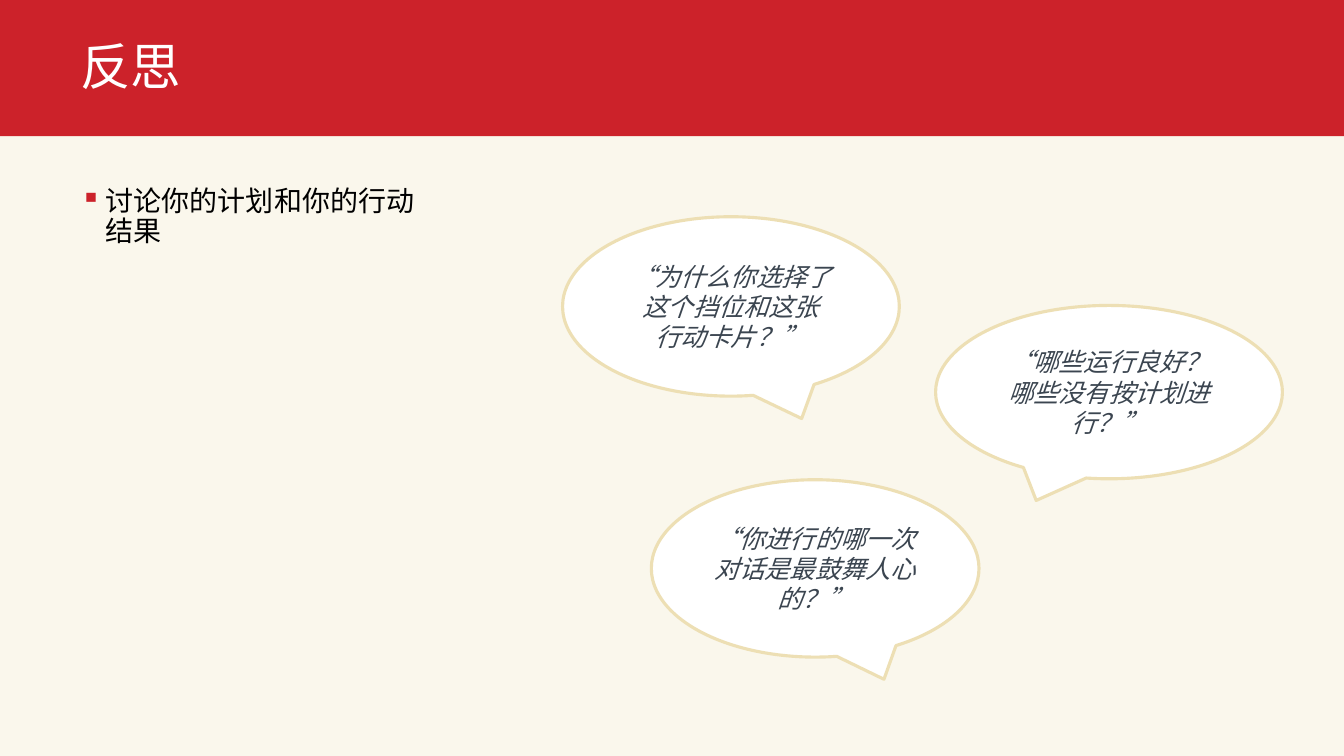
from lxml import etree
from pptx import Presentation
from pptx.dml.color import RGBColor
from pptx.enum.shapes import MSO_SHAPE
from pptx.enum.text import MSO_ANCHOR, PP_ALIGN
from pptx.oxml.ns import qn
from pptx.util import Inches, Pt

RECTANGLE = MSO_SHAPE.RECTANGLE
CALLOUT = MSO_SHAPE.OVAL_CALLOUT
TOP, MIDDLE = MSO_ANCHOR.TOP, MSO_ANCHOR.MIDDLE
LEFT, CENTER = PP_ALIGN.LEFT, PP_ALIGN.CENTER

WIDTH, HEIGHT = 13.33, 7.5
BANNER_HEIGHT = 0.18 * HEIGHT
MARGIN = 0.7
FONT = "Noto Sans CJK SC"
RED, CREAM, SAND = "CC222A", "FAF7EC", "EDDFB4"
WHITE, BLACK, SLATE = "FFFFFF", "000000", "3B4550"

TAIL_OFFSET = 0.21
QUESTIONS = [
    ((5.58, 2.15, 3.34, 1.78), TAIL_OFFSET, "“为什么你选择了这个挡位和这张\n行动卡片？”"),
    ((9.28, 3.03, 3.44, 1.72), -TAIL_OFFSET, "“哪些运行良好？哪些没有按计划进行？”"),
    ((6.46, 4.76, 3.25, 1.76), TAIL_OFFSET, "“你进行的哪一次对话是最鼓舞人心的？”"),
]


def color(value):
    return RGBColor.from_string(value)


def add_filled_shape(slide, kind, box, fill):
    shape = slide.shapes.add_shape(kind, *map(Inches, box))
    shape.shadow.inherit = False
    shape.fill.solid()
    shape.fill.fore_color.rgb = color(fill)
    shape.line.fill.background()
    return shape


def write_text(shape, text, size, text_color, anchor, align, italic=None, spacing=None):
    frame = shape.text_frame
    frame.word_wrap = True
    frame.vertical_anchor = anchor
    frame.text = text
    for paragraph in frame.paragraphs:
        paragraph.alignment = align
        paragraph.line_spacing = spacing
        for run in paragraph.runs:
            run.font.size = Pt(size)
            run.font.italic = italic
            run.font.name = FONT
            run.font.color.rgb = color(text_color)
            properties = run.font._element
            etree.SubElement(properties, qn("a:ea"), typeface=FONT)
    return frame


def add_bullet(paragraph, indent):
    properties = paragraph._p.get_or_add_pPr()
    properties.set("marL", str(Inches(indent)))
    properties.set("indent", str(-Inches(indent)))
    bullet_color = etree.SubElement(properties, qn("a:buClr"))
    etree.SubElement(bullet_color, qn("a:srgbClr"), val=RED)
    etree.SubElement(properties, qn("a:buChar"), char="▪")


def add_banner(slide, box, title):
    left, top, width, height = box
    add_filled_shape(slide, RECTANGLE, box, RED)
    title_box = (left + MARGIN, top + 0.07 * height, width - 2 * MARGIN, 0.88 * height)
    text_box = slide.shapes.add_textbox(*map(Inches, title_box))
    write_text(text_box, title, 36, WHITE, MIDDLE, LEFT, spacing=0.9)


def add_discussion(slide, box, text):
    text_box = slide.shapes.add_textbox(*map(Inches, box))
    frame = write_text(text_box, text, 20, BLACK, TOP, LEFT, spacing=0.9)
    add_bullet(frame.paragraphs[0], 0.25)


def add_question(slide, box, tail, text):
    bubble = add_filled_shape(slide, CALLOUT, box, WHITE)
    bubble.adjustments[0] = tail
    bubble.line.color.rgb = color(SAND)
    bubble.line.width = Pt(2.25)
    write_text(bubble, text, 18, SLATE, MIDDLE, CENTER, italic=True)


def build_reflection_slide(presentation):
    slide = presentation.slides.add_slide(presentation.slide_layouts[6])
    body = (0, BANNER_HEIGHT, WIDTH, HEIGHT - BANNER_HEIGHT)
    add_filled_shape(slide, RECTANGLE, body, CREAM)
    add_banner(slide, (0, 0, WIDTH, BANNER_HEIGHT), "反思")
    add_discussion(slide, (MARGIN, 1.81, 3.72, 5.16), "讨论你的计划和你的行动结果")
    for box, tail, text in QUESTIONS:
        add_question(slide, box, tail, text)


def main():
    presentation = Presentation()
    presentation.slide_width = Inches(WIDTH)
    presentation.slide_height = Inches(HEIGHT)
    build_reflection_slide(presentation)
    presentation.save("out.pptx")


if __name__ == "__main__":
    main()
